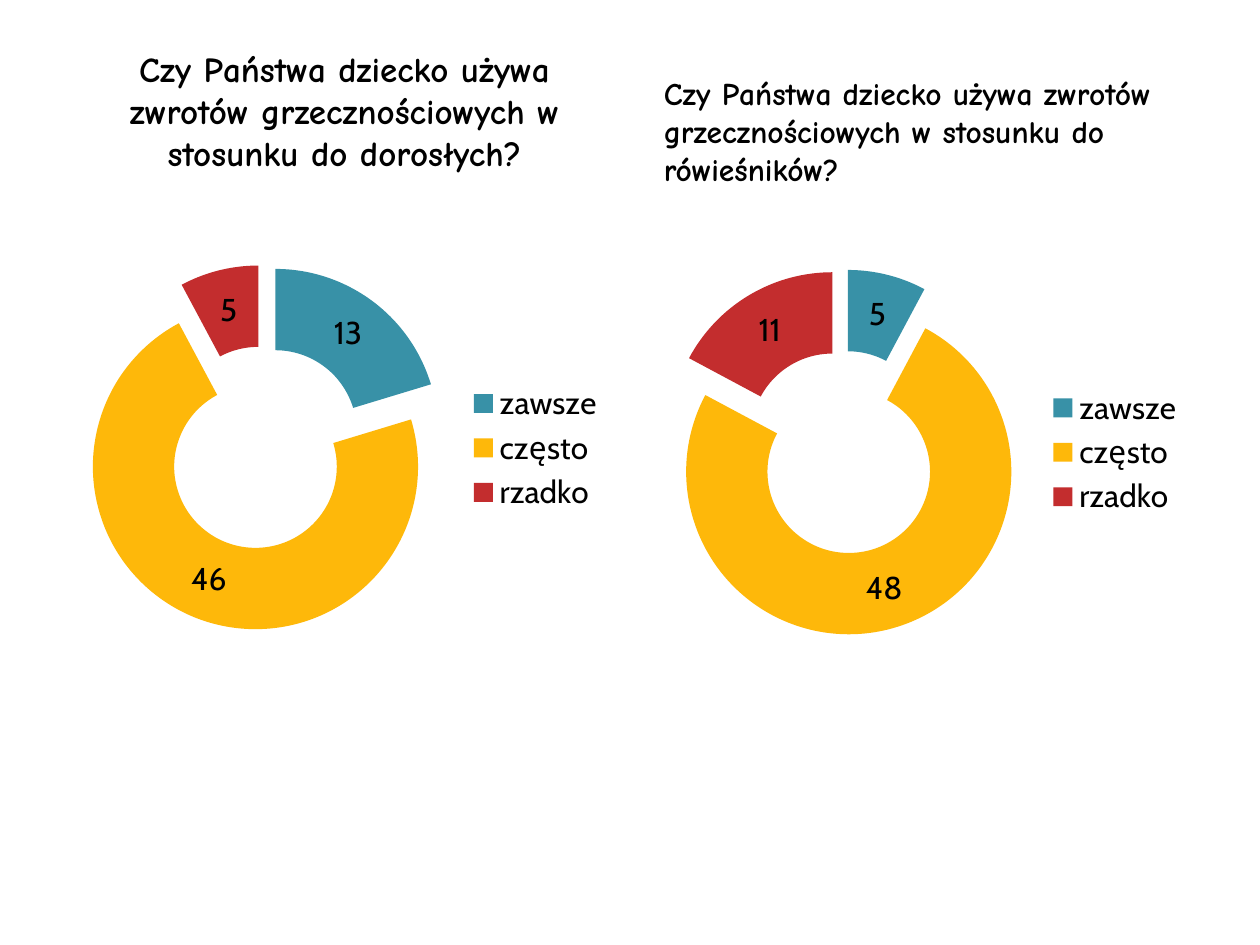
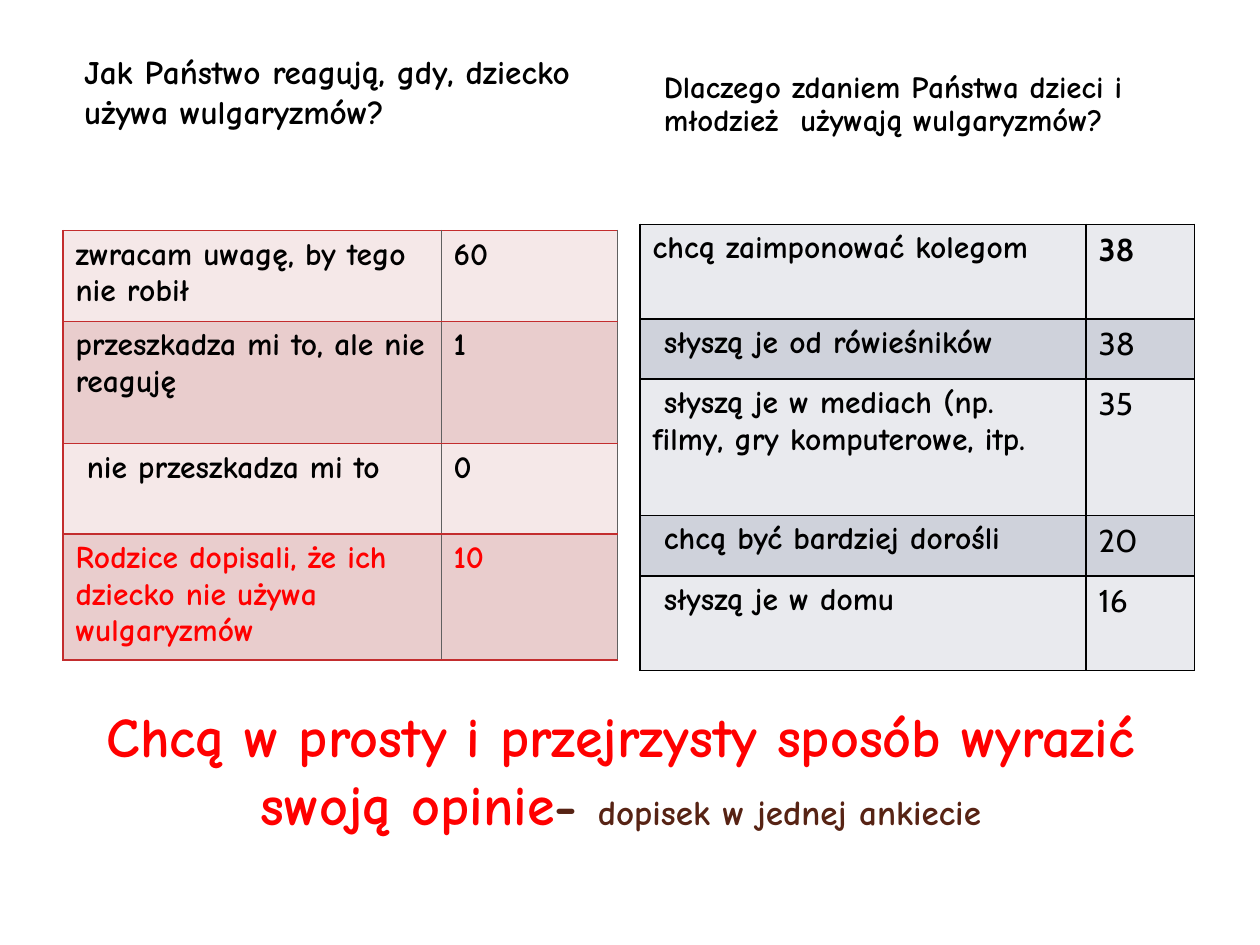
import dataclasses

import lxml.etree
import pptx
import pptx.chart.data
import pptx.dml.color
import pptx.enum.chart
import pptx.enum.text
import pptx.oxml.ns
import pptx.util

Inches = pptx.util.Inches
Pt = pptx.util.Pt
qn = pptx.oxml.ns.qn
CENTER = pptx.enum.text.PP_ALIGN.CENTER
MIDDLE = pptx.enum.text.MSO_ANCHOR.MIDDLE


@dataclasses.dataclass(frozen=True)
class Theme:
    hand: str = "Comic Neue"
    plain: str = "Cabin"
    white: str = "FFFFFF"
    black: str = "000000"
    alert: str = "FF0000"
    brown: str = "572314"
    divider: str = "606060"
    crimson: str = "C32D2E"
    slices: tuple = ("3891A7", "FEB80A", "C32D2E")
    rose_bands: tuple = ("F5E8E8", "E9CDCD")
    grey_bands: tuple = ("E9EAEE", "CFD2DB")
    body: float = 18
    note: float = 20
    remark: float = 32


THEME = Theme()
COLUMN_LEFTS = (0.5, 5.1)
COLUMN_WIDTH = 4.4
HEADING_TOP = 0.36
EMPTY_LINE = 0.3  # room kept free under a raised heading


def rgb(value):
    return pptx.dml.color.RGBColor.from_string(value)


def apply(target, values):
    for name, value in values.items():
        setattr(target, name, value)


def style_font(font, size=THEME.body, color=THEME.black, face=THEME.hand, bold=True):
    apply(font, {"size": Pt(size), "name": face, "bold": bold})
    font.color.rgb = rgb(color)


def add_run(paragraph, text, **style):
    run = paragraph.add_run()
    run.text = text
    style_font(run.font, **style)


def add_heading(slide, box, question, size, raised=0, **paragraph_format):
    """White panel with the survey question."""
    panel = slide.shapes.add_shape(
        pptx.enum.shapes.MSO_SHAPE.RECTANGLE, *map(Inches, box))
    panel.shadow.inherit = False
    panel.fill.solid()
    panel.fill.fore_color.rgb = rgb(THEME.white)
    panel.line.color.rgb = rgb(THEME.white)
    panel.line.width = Pt(0.85)
    apply(panel.text_frame, {
        "word_wrap": True,
        "vertical_anchor": MIDDLE,
        "margin_bottom": Inches(0.05 + raised),
    })
    paragraph = panel.text_frame.paragraphs[0]
    apply(paragraph, {"alignment": pptx.enum.text.PP_ALIGN.LEFT,
                      "space_before": Pt(1), **paragraph_format})
    paragraph._p.get_or_add_pPr().set("marL", str(Inches(0.07)))
    add_run(paragraph, question, size=size)


def add_answer_ring(slide, box, counts):
    """Exploded doughnut with the answers of the parents."""
    answers = pptx.chart.data.CategoryChartData()
    answers.categories = ("zawsze", "często", "rzadko")
    answers.add_series("Series 1", counts)
    ring = slide.shapes.add_chart(
        pptx.enum.chart.XL_CHART_TYPE.DOUGHNUT_EXPLODED,
        *map(Inches, box), answers).chart
    apply(ring, {"has_title": False, "has_legend": True})
    style_font(ring.font, face=THEME.plain, bold=False)
    apply(ring.legend, {
        "position": pptx.enum.chart.XL_LEGEND_POSITION.RIGHT,
        "include_in_layout": False,
    })

    plot = ring.plots[0]
    apply(plot, {"vary_by_categories": True, "has_data_labels": True})
    apply(plot.data_labels, {"show_value": True, "show_percentage": False})
    style_font(plot.data_labels.font, face=THEME.plain, bold=False)
    for index, color in enumerate(THEME.slices):
        fill = plot.series[0].points[index].format.fill
        fill.solid()
        fill.fore_color.rgb = rgb(color)


def set_borders(cell, edges):
    """Draw cell edges given as {side: (colour, points)}."""
    properties = cell._tc.get_or_add_tcPr()
    for position, side in enumerate(("L", "R", "T", "B")):
        color, width = edges[side]
        line = lxml.etree.Element(qn(f"a:ln{side}"), w=str(Pt(width)))
        fill = lxml.etree.SubElement(line, qn("a:solidFill"))
        lxml.etree.SubElement(fill, qn("a:srgbClr"), val=color)
        properties.insert(position, line)


def add_answer_table(slide, left, top, widths, heights, rows, bands, line, divider):
    """Answers with counts; each row holds (text, style) pairs."""
    table = slide.shapes.add_table(
        len(rows), len(widths), Inches(left), Inches(top),
        Inches(sum(widths)), Inches(sum(heights))).table
    apply(table, {"first_row": False, "horz_banding": False})
    for column, width in zip(table.columns, widths):
        column.width = Inches(width)
    for row_index, (row, height) in enumerate(zip(rows, heights)):
        table.rows[row_index].height = Inches(height)
        for column_index, (text, style) in enumerate(row):
            cell = table.cell(row_index, column_index)
            cell.fill.solid()
            cell.fill.fore_color.rgb = rgb(bands[row_index % 2])
            add_run(cell.text_frame.paragraphs[0], text, **style)
            set_borders(cell, {
                "L": divider if column_index else line,
                "R": divider, "T": line, "B": line,
            })


def add_remark(slide, box):
    """Closing remark quoted from one questionnaire."""
    remark = slide.shapes.add_textbox(*map(Inches, box)).text_frame
    apply(remark, {"word_wrap": True, "vertical_anchor": MIDDLE})
    paragraph = remark.paragraphs[0]
    paragraph.alignment = CENTER
    add_run(paragraph, "Chcą w prosty i przejrzysty sposób wyrazić swoją opinie",
            size=THEME.remark, color=THEME.alert)
    add_run(paragraph, "- ", size=THEME.remark, color=THEME.brown)
    add_run(paragraph, "dopisek w jednej ankiecie", size=THEME.note, color=THEME.brown)


def build_politeness_slide(slide):
    left, right = COLUMN_LEFTS
    question = "Czy Państwa dziecko używa zwrotów grzecznościowych w stosunku do "
    add_heading(slide, (left, HEADING_TOP, COLUMN_WIDTH, 1.03),
                question + "dorosłych?", 20, alignment=CENTER)
    add_heading(slide, (right, HEADING_TOP, COLUMN_WIDTH, 1.66),
                question + "rówieśników?", 18, raised=EMPTY_LINE)
    add_answer_ring(slide, (left, 1.62, COLUMN_WIDTH, 3.87), (13, 46, 5))
    add_answer_ring(slide, (right, 1.62, COLUMN_WIDTH, 3.94), (5, 48, 11))


def build_swearing_slide(slide):
    left, right = COLUMN_LEFTS
    add_remark(slide, (0.43, 5.32, 9, 1.57))
    add_heading(slide, (left, HEADING_TOP, COLUMN_WIDTH, 1.03),
                "Jak Państwo reagują, gdy, dziecko używa wulgaryzmów?",
                19, raised=EMPTY_LINE)
    add_heading(slide, (right, HEADING_TOP, COLUMN_WIDTH, 0.95),
                "Dlaczego zdaniem Państwa dzieci i młodzież  używają wulgaryzmów?",
                17.6, line_spacing=0.9)

    # Reactions of the parents; the last row is their own addition
    reactions = (
        ("zwracam uwagę, by tego nie robił", "60"),
        ("przeszkadza mi to, ale nie reaguję", "1"),
        (" nie przeszkadza mi to", "0"),
        ("Rodzice dopisali, że ich dziecko nie używa wulgaryzmów", "10"),
    )
    reaction_rows = [[(text, {}) for text in row] for row in reactions]
    reaction_rows[-1] = [(text, {"color": THEME.alert}) for text in reactions[-1]]
    add_answer_table(slide, left, 1.83, (3, 1.4), (0.72, 0.97, 0.72, 0.97),
                     reaction_rows, THEME.rose_bands,
                     (THEME.crimson, 1), (THEME.divider, 0.5))

    # Reasons for swearing; only the first count is bold
    reasons = (
        ("chcą zaimponować kolegom", "38"),
        (" słyszą je od rówieśników", "38"),
        (" słyszą je w mediach (np. filmy, gry komputerowe, itp.", "35"),
        (" chcą być bardziej dorośli", "20"),
        (" słyszą je w domu", "16"),
    )
    reason_rows = [
        ((reason, {}), (count, {"face": THEME.plain, "bold": index == 0}))
        for index, (reason, count) in enumerate(reasons)
    ]
    add_answer_table(slide, 5.08, 1.78, (3.54, 0.86), (0.75, 0.48, 1.08, 0.48, 0.75),
                     reason_rows, THEME.grey_bands,
                     (THEME.black, 1), (THEME.black, 1))


def main():
    deck = pptx.Presentation()
    apply(deck, {"slide_width": Inches(10), "slide_height": Inches(7.5)})
    for build in (build_politeness_slide, build_swearing_slide):
        build(deck.slides.add_slide(deck.slide_layouts[6]))
    deck.save("out.pptx")


if __name__ == "__main__":
    main()
